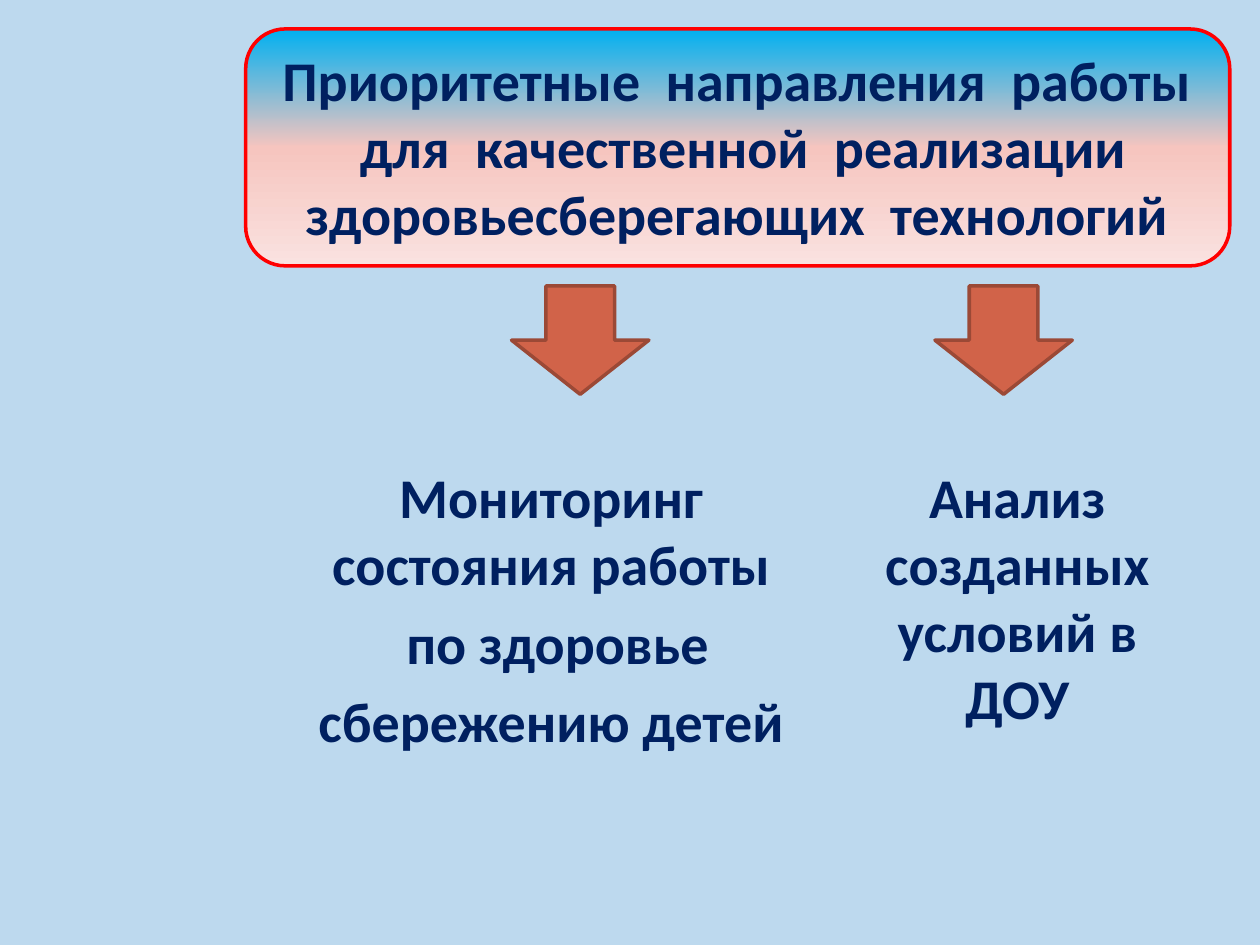
"""Build a slide on the priorities of health-saving work in a kindergarten."""
from copy import deepcopy

from lxml import etree
from pptx import Presentation, util as u
from pptx.dml.color import RGBColor
from pptx.enum import shapes, text
from pptx.oxml.ns import qn

TITLE = "Приоритетные  направления  работы  для  качественной  реализации здоровьесберегающих  технологий"
LEFT = ["Мониторинг состояния работы", " по здоровье", "сбережению детей"]
RIGHT = ["Анализ созданных условий в ДОУ"]
STOPS = [(0, "00B0F0"), (0.5, "F6C5BF"), (1, "FAE2E0")]
ARROWS = [4.06, 7.42]
TOP = 3.62
KIND = shapes.MSO_SHAPE


def paint(color, code):
    color.rgb = RGBColor.from_string(code)


def place(shape, box):
    shape.left, shape.top, shape.width, shape.height = map(u.Inches, box)


def draw(slide, kind, box, fill=None, line=None):
    shape = slide.shapes.add_shape(kind, *map(u.Inches, box))
    shape.shadow.inherit = False
    if fill:
        shape.fill.solid()
        paint(shape.fill.fore_color, fill)
    if line:
        paint(shape.line.color, line)
        shape.line.width = u.Pt(2)
    else:
        shape.line.fill.background()
    return shape


def blend(shape, stops):
    shape.fill.gradient()
    shape.fill.gradient_angle = 270
    items = shape._element.spPr.find(".//" + qn("a:gsLst"))
    items.append(deepcopy(items[0]))
    for stop, (pos, code) in zip(shape.fill.gradient_stops, stops):
        stop.position = pos
        paint(stop.color, code)


def write(shape, box, lines, indent=0.0, anchor=text.MSO_ANCHOR.TOP):
    place(shape, box)
    frame = shape.text_frame
    frame.word_wrap = True
    frame.auto_size = text.MSO_AUTO_SIZE.NONE
    frame.vertical_anchor = anchor
    for i, line in enumerate(lines):
        para = frame.add_paragraph() if i else frame.paragraphs[0]
        para.alignment = text.PP_ALIGN.CENTER
        para.space_before = u.Pt(6.4 if i else 0)
        props = para._p.get_or_add_pPr()
        props.set("marL", str(u.Inches(indent)))
        props.set("indent", "0")
        etree.SubElement(props, qn("a:buNone"))
        run = para.add_run()
        run.text = line
        run.font.name, run.font.size, run.font.bold = "Calibri", u.Pt(32), True
        paint(run.font.color, "002060")


def main():
    deck = Presentation()
    deck.slide_width, deck.slide_height = u.Inches(10), u.Inches(7.5)
    slide = deck.slides.add_slide(deck.slide_layouts[1])
    title, body = slide.placeholders

    back = draw(slide, KIND.RECTANGLE, (0, 0, 10, 7.5), "0070C0")
    tint = back._element.spPr.find(".//" + qn("a:srgbClr"))
    etree.SubElement(tint, qn("a:alpha")).set("val", "26000")
    panel = draw(slide, KIND.ROUNDED_RECTANGLE, (1.95, 0.23, 7.81, 1.88), line="FF0000")
    blend(panel, STOPS)

    for holder in (title, body):
        slide.shapes._spTree.append(holder._element)
    write(title, (2.11, 0.23, 7.48, 1.86), [TITLE], anchor=text.MSO_ANCHOR.MIDDLE)
    write(body, (1.8, TOP, 4.77, 3.08), LEFT, 0.38)
    note = slide.shapes.add_textbox(0, 0, 0, 0)
    write(note, (6.48, TOP, 2.81, 2.26), RIGHT, 0.38)

    for x in ARROWS:
        draw(slide, KIND.DOWN_ARROW, (x, 2.27, 1.09, 0.86), "D16349", "9B4936")
    deck.save("out.pptx")


if __name__ == "__main__":
    main()
